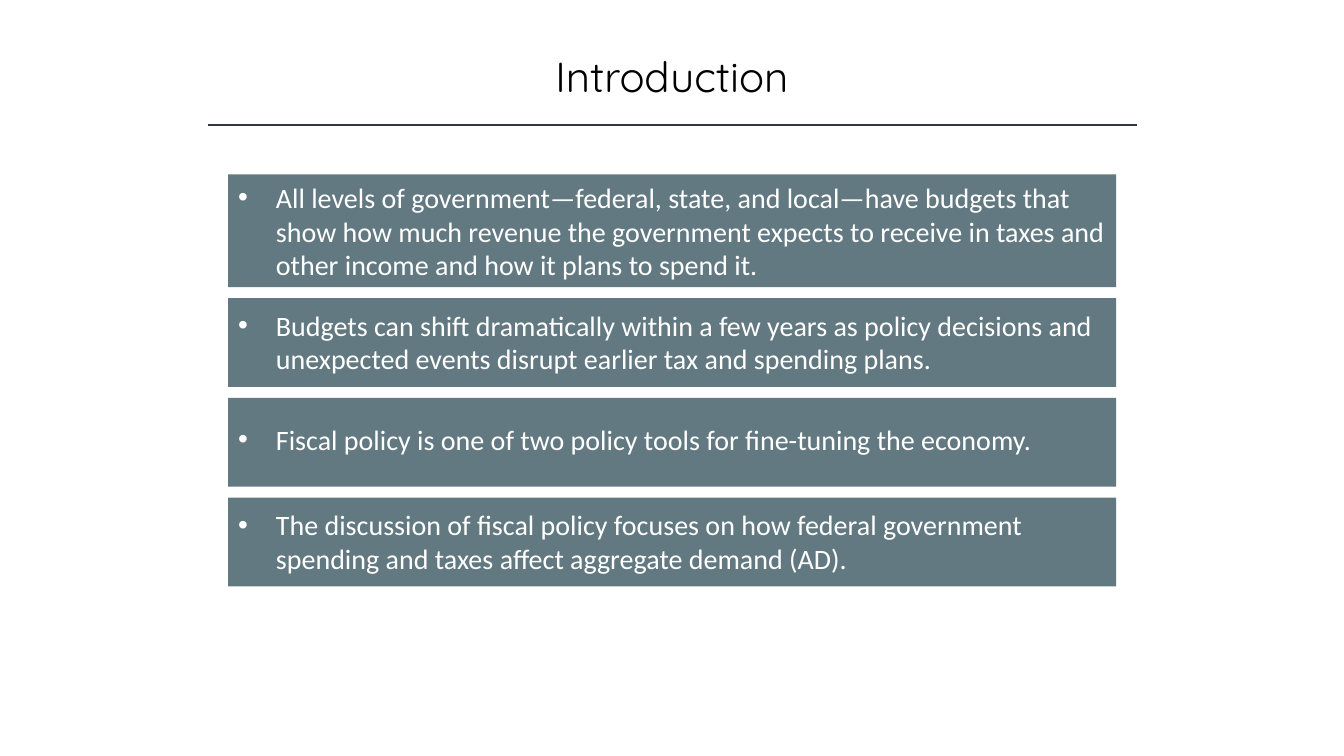
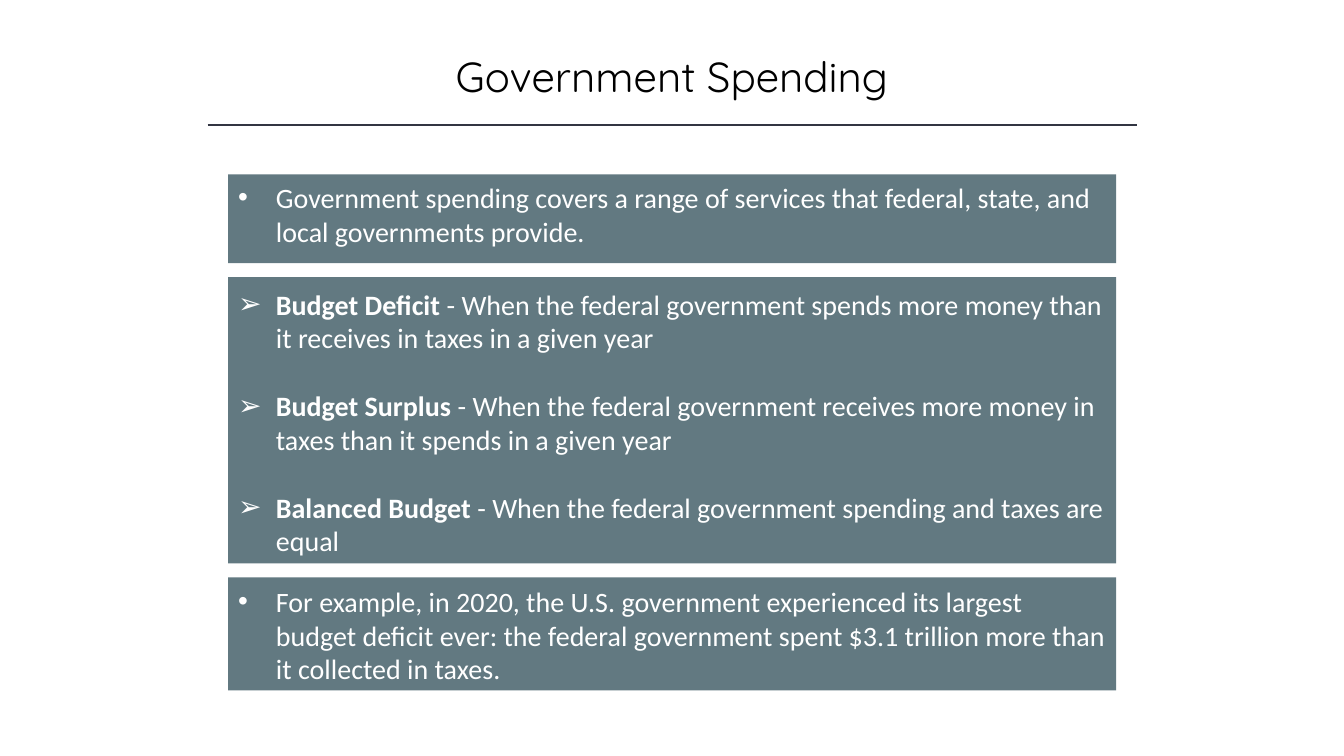
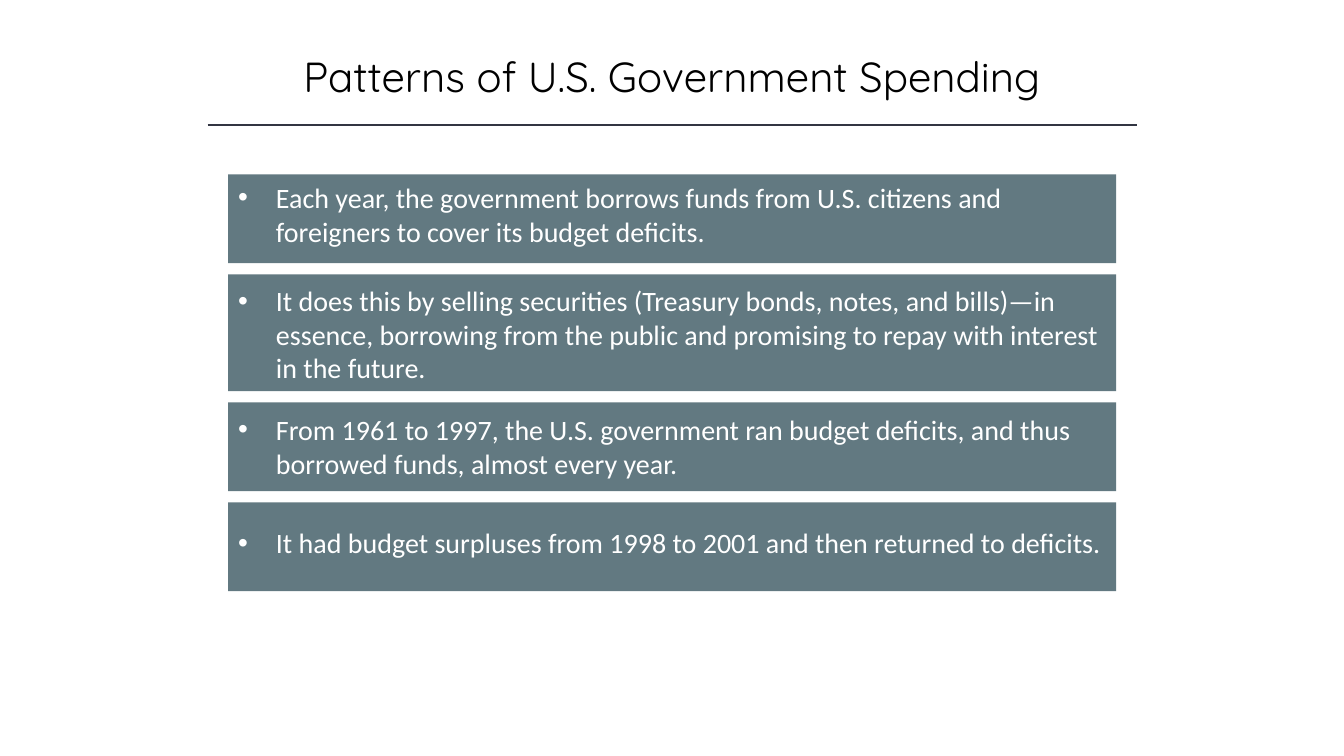
"""Build three slides on government budgets and fiscal policy."""
import dataclasses

import pptx
import pptx.dml.color
import pptx.enum.shapes
import pptx.enum.text
import pptx.oxml
import pptx.oxml.ns
import pptx.util

Pt = pptx.util.Pt


@dataclasses.dataclass(frozen=True)
class Theme:
    """Colours, fonts, type sizes and shared measures in points."""

    panel: str = "627981"
    rule: str = "323542"
    title: str = "000000"
    body: str = "FFFFFF"
    title_font: str = "Quicksand"
    body_font: str = "Calibri"
    title_size: float = 30
    body_size: float = 20
    panel_left: float = 163
    panel_width: float = 634.3
    first_top: float = 124.6
    hanging: float = 27
    term_gap: float = 24.4


@dataclasses.dataclass(frozen=True)
class Panel:
    """One filled panel with (term, statement) points and its text offset."""

    points: tuple
    height: float = 63.4
    lead: float = 3.6
    bullet: str = "•"


THEME = Theme()
TALL = 80.6

INTRODUCTION = (
    Panel((("", "All levels of government—federal, state, and local—have budgets that show how much "
                "revenue the government expects to receive in taxes and other income and how it "
                "plans to spend it."),), TALL, 0.7),
    Panel((("", "Budgets can shift dramatically within a few years as policy decisions and "
                "unexpected events disrupt earlier tax and spending plans."),)),
    Panel((("", "Fiscal policy is one of two policy tools for fine-tuning the economy."),), lead=13.7),
    Panel((("", "The discussion of fiscal policy focuses on how federal government spending and "
                "taxes affect aggregate demand (AD)."),)),
)

SPENDING = (
    Panel((("", "Government spending covers a range of services that federal, state, and local "
                "governments provide."),), lead=0.7),
    Panel((
        ("Budget Deficit ", "- When the federal government spends more money than it receives in "
                            "taxes in a given year"),
        ("Budget Surplus ", "- When the federal government receives more money in taxes than it "
                            "spends in a given year"),
        ("Balanced Budget ", "- When the federal government spending and taxes are equal"),
    ), 204.5, bullet="➢"),
    Panel((("", "For example, in 2020, the U.S. government experienced its largest budget deficit "
                "ever: the federal government spent $3.1 trillion more than it collected in "
                "taxes."),), TALL, 1.4),
)

PATTERNS = (
    Panel((("", "Each year, the government borrows funds from U.S. citizens and foreigners to "
                "cover its budget deficits."),), lead=0.7),
    Panel((("", "It does this by selling securities (Treasury bonds, notes, and bills)—in essence, "
                "borrowing from the public and promising to repay with interest in the "
                "future."),), 83.5, 3),
    Panel((("", "From 1961 to 1997, the U.S. government ran budget deficits, and thus borrowed "
                "funds, almost every year."),)),
    Panel((("", "It had budget surpluses from 1998 to 2001 and then returned to deficits."),), lead=13),
)


def rgb(code):
    """Turn a hex code into a colour."""
    return pptx.dml.color.RGBColor.from_string(code)


def style_run(run, font, size, colour, bold=False):
    """Give a run its typeface, size, colour and weight."""
    run.font.name = font
    run.font.size = Pt(size)
    run.font.color.rgb = rgb(colour)
    run.font.bold = bold


def add_title(slide, wording):
    """Add the centred heading and the rule below it."""
    heading = slide.shapes.add_textbox(Pt(134), Pt(32.4), Pt(692), Pt(44))
    heading.text_frame.word_wrap = True
    heading.text_frame.text = wording
    paragraph = heading.text_frame.paragraphs[0]
    paragraph.alignment = pptx.enum.text.PP_ALIGN.CENTER
    style_run(paragraph.runs[0], THEME.title_font, THEME.title_size, THEME.title)
    rule = slide.shapes.add_connector(
        pptx.enum.shapes.MSO_CONNECTOR.STRAIGHT, Pt(148.3), Pt(89.3), Pt(812.2), Pt(89.3))
    rule.line.color.rgb = rgb(THEME.rule)
    rule.line.width = Pt(1)
    pptx.oxml.ns.qn("a:effectLst")
    rule._element.spPr.append(pptx.oxml.parse_xml(
        f"<a:effectLst {pptx.oxml.ns.nsdecls('a')}/>"))


def set_bullet(paragraph, symbol):
    """Give a paragraph a hanging indent and a bullet."""
    properties = paragraph._p.get_or_add_pPr()
    properties.set("marL", str(Pt(THEME.hanging)))
    properties.set("indent", str(-Pt(THEME.hanging)))
    namespace = pptx.oxml.ns.nsdecls("a")
    for tag in ('buFont typeface="Arial"', f'buChar char="{symbol}"'):
        properties.append(pptx.oxml.parse_xml(f"<a:{tag.replace(' ', f' {namespace} ', 1)}/>"))


def write_point(paragraph, term, statement, symbol):
    """Write a bulleted statement, led by a bold term if there is one."""
    paragraph.alignment = pptx.enum.text.PP_ALIGN.LEFT
    for wording, bold in ((term, True), (statement, False)):
        if wording:
            run = paragraph.add_run()
            run.text = wording
            style_run(run, THEME.body_font, THEME.body_size, THEME.body, bold)
    set_bullet(paragraph, symbol)


def add_panel(slide, panel, top):
    """Add a filled panel with its bulleted points."""
    box = slide.shapes.add_shape(
        pptx.enum.shapes.MSO_SHAPE.RECTANGLE,
        Pt(THEME.panel_left), Pt(top), Pt(THEME.panel_width), Pt(panel.height))
    box.shadow.inherit = False
    box.fill.solid()
    box.fill.fore_color.rgb = rgb(THEME.panel)
    box.line.fill.background()
    frame = box.text_frame
    frame.word_wrap = True
    frame.vertical_anchor = pptx.enum.text.MSO_ANCHOR.TOP
    frame.margin_top = Pt(panel.lead + 3.6)
    frame.margin_bottom = Pt(0)
    for index, (term, statement) in enumerate(panel.points):
        paragraph = frame.add_paragraph() if index else frame.paragraphs[0]
        if index:
            paragraph.space_before = Pt(THEME.term_gap)
        write_point(paragraph, term, statement, panel.bullet)


def add_panel_slide(deck, title, panels, gap):
    """Add a slide with a title and panels stacked at an equal gap."""
    slide = deck.slides.add_slide(deck.slide_layouts[6])
    add_title(slide, title)
    top = THEME.first_top
    for panel in panels:
        add_panel(slide, panel, top)
        top += panel.height + gap


def main():
    """Build and save the deck."""
    deck = pptx.Presentation()
    deck.slide_width, deck.slide_height = Pt(960), Pt(540)
    add_panel_slide(deck, "Introduction", INTRODUCTION, 7.8)
    add_panel_slide(deck, "Government Spending", SPENDING, 10)
    add_panel_slide(deck, "Patterns of U.S. Government Spending", PATTERNS, 8)
    deck.save("out.pptx")


if __name__ == "__main__":
    main()
